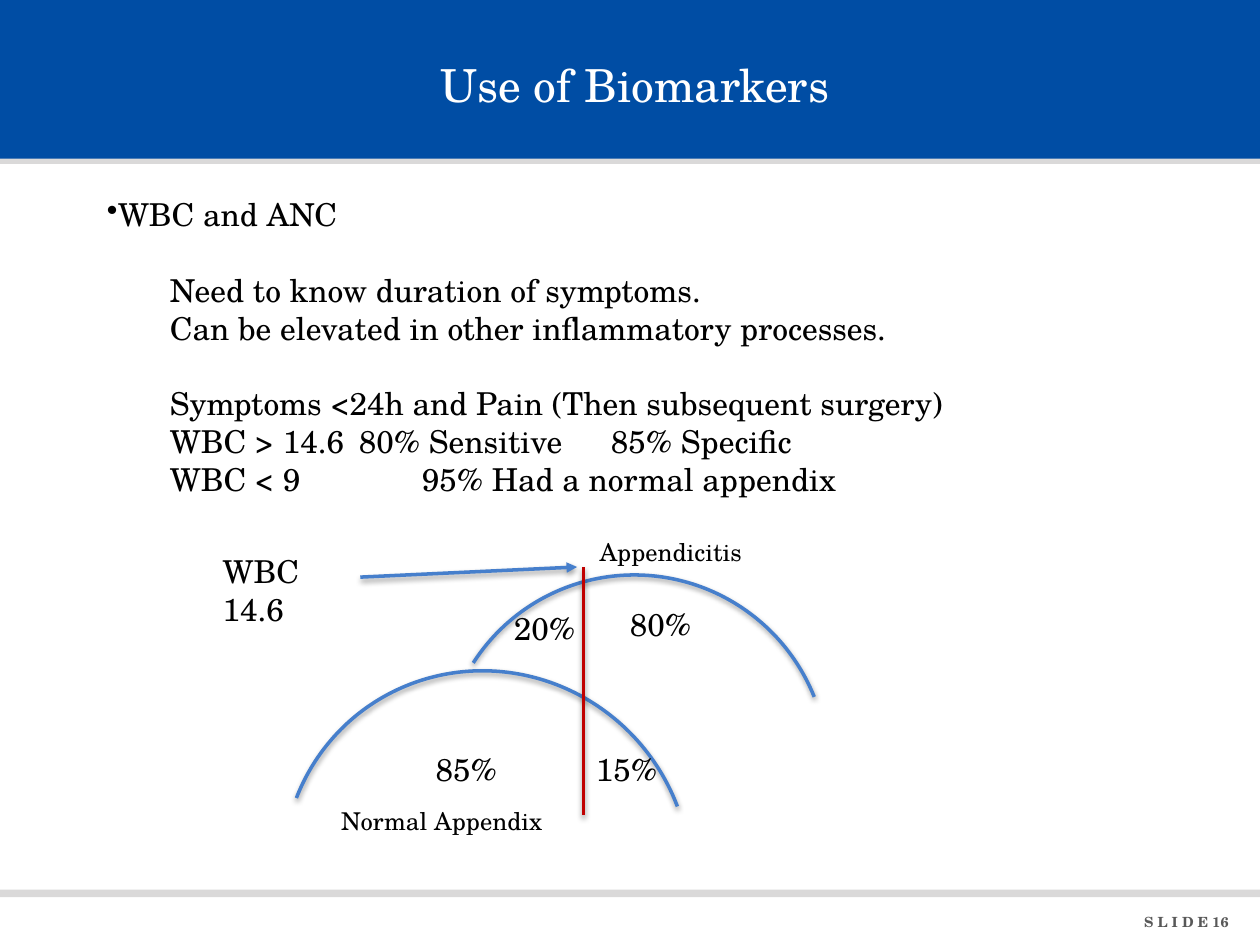
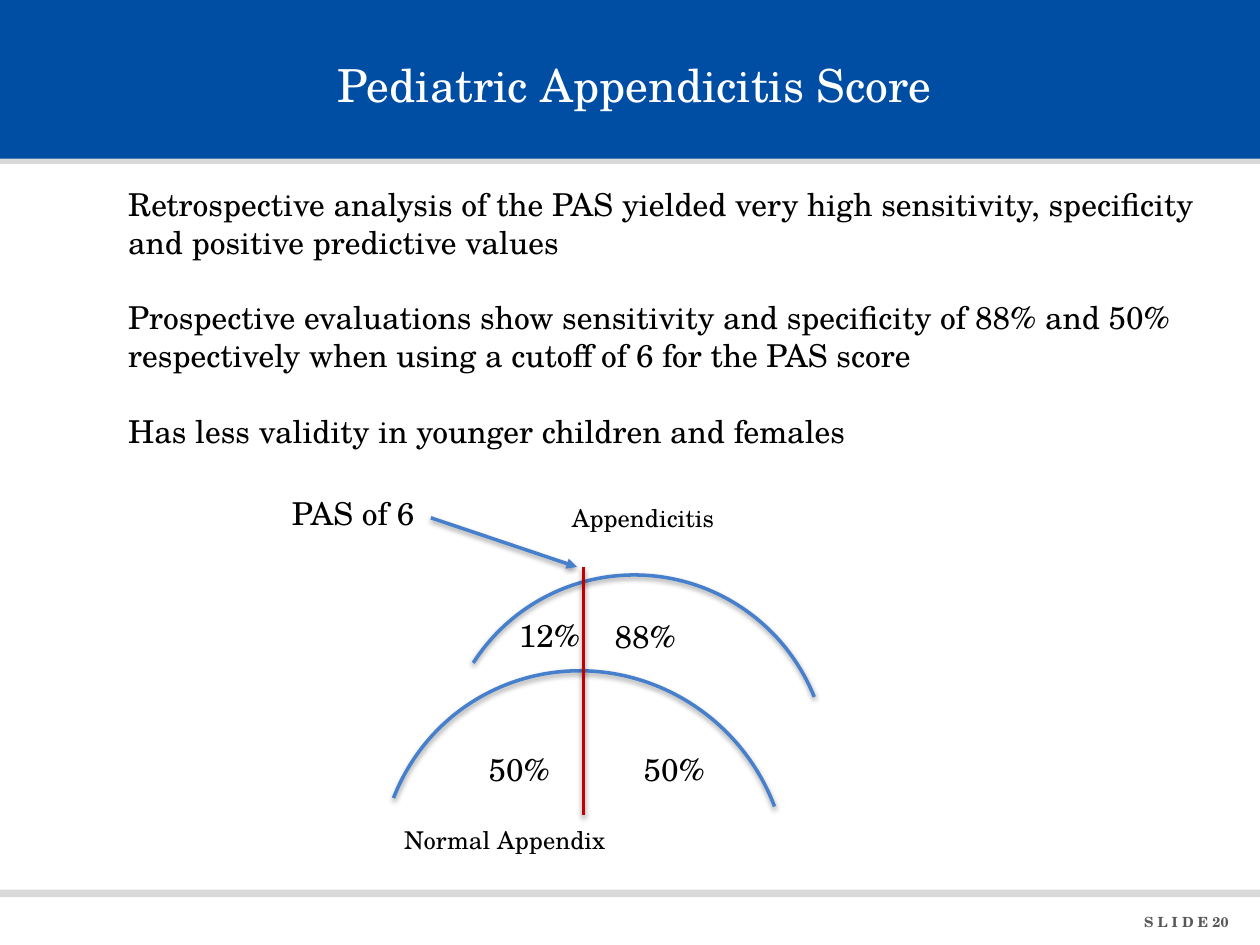
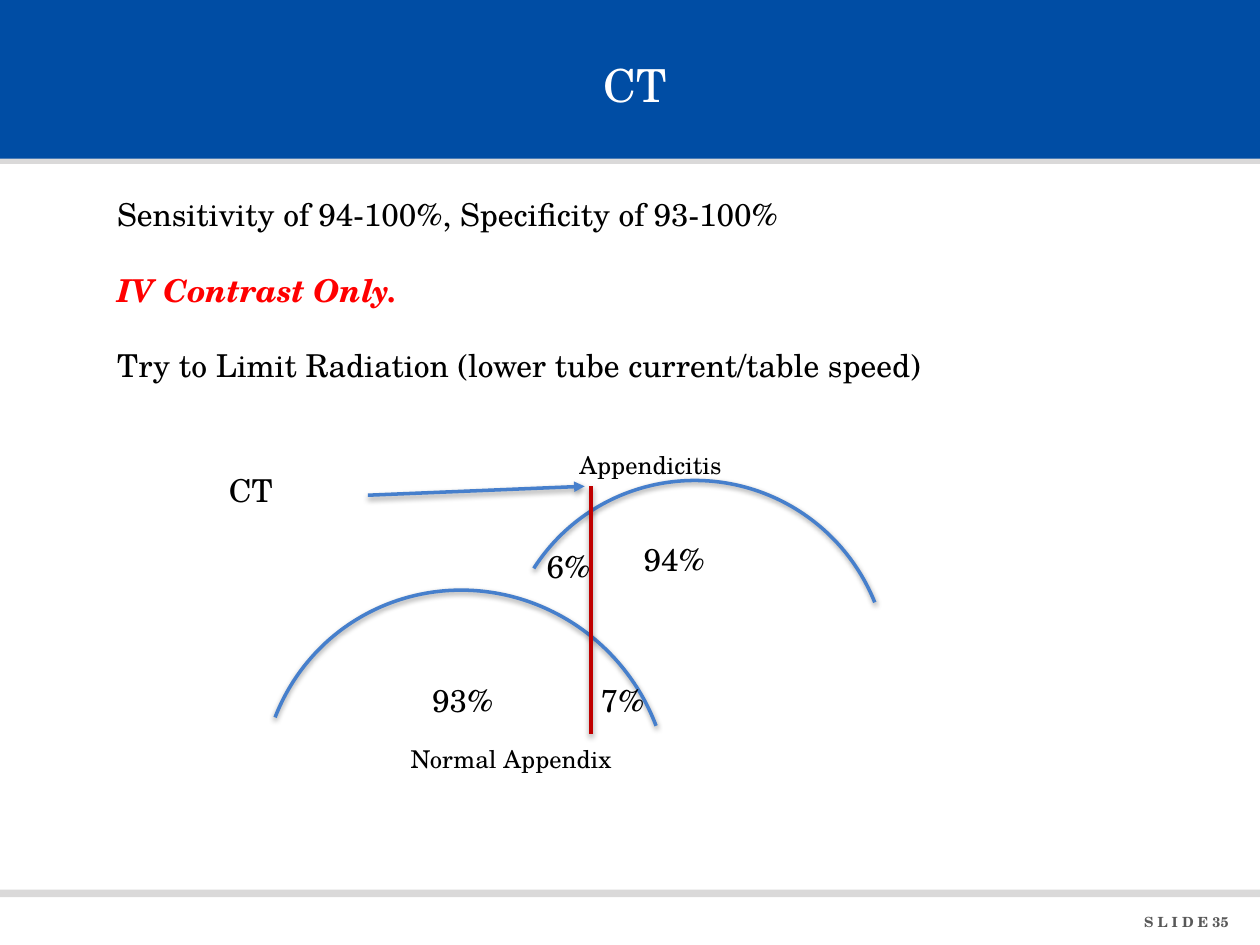
from lxml import etree
from pptx import Presentation
from pptx.dml.color import RGBColor
from pptx.enum.shapes import MSO_CONNECTOR, MSO_SHAPE
from pptx.enum.text import MSO_ANCHOR, PP_ALIGN
from pptx.oxml.ns import qn
from pptx.util import Pt

RECTANGLE, ARC = MSO_SHAPE.RECTANGLE, MSO_SHAPE.ARC
STRAIGHT = MSO_CONNECTOR.STRAIGHT
LEFT, CENTER, RIGHT = PP_ALIGN.LEFT, PP_ALIGN.CENTER, PP_ALIGN.RIGHT
TOP, MIDDLE = MSO_ANCHOR.TOP, MSO_ANCHOR.MIDDLE

FONT = "TeX Gyre Schola"
COLORS = {
    "band": "004DA4", "rule": "DAD9D9", "white": "FFFFFF", "text": "000000",
    "footer": "585858", "curve": "467FCC", "cutoff": "C00000", "alert": "FF0000",
}
LINE_GAP = 21.6  # one empty line at 18 points

# Bands behind every slide: left, top, width, height, colour
BANDS = [
    (0, 75.6, 720, 18, "rule"),
    (0, 0, 720, 90.7, "band"),
    (0, 508.3, 720, 4.4, "rule"),
]
FOOTER_BOX = (607, 518.4, 102.2, 16.6)

# Each curve: width, height, start and end adjustment
CURVES = {
    "normal": (231.1, 236.2, 145.18, 11.896),
    "appendicitis": (219.6, 221, 151.606, 10.883),
}
CURVE_ROTATION = 320.2
CUTOFF_HEIGHT = 141.8
ARROW_GAP = 3.6

INDENTED = {"level": 1, "margin": 36}
TABBED = {"level": 1, "tabs": (108, 252, 324, 402.8)}
NEW_BLOCK = {"before": LINE_GAP}

# Body paragraphs are (text, format); labels are (text, left, top, width)
SLIDES = [
    {
        "number": 16,
        "title": "Use of Biomarkers",
        "title_box": (42.5, 12.2, 640.8, 72),
        "body_box": (54, 108, 606.2, 203.8),
        "body": [
            ("WBC and ANC", {"bullet": "•"}),
            ("Need to know duration of symptoms.", INDENTED | NEW_BLOCK),
            ("Can be elevated in other inflammatory processes.", INDENTED),
            ("Symptoms <24h and Pain (Then subsequent surgery)", INDENTED | NEW_BLOCK),
            ("\tWBC > 14.6\t80% Sensitive\t85% Specific", TABBED),
            ("\tWBC < 9\t\t95% Had a normal appendix", TABBED),
        ],
        "curves": {"normal": (162.7, 382.3), "appendicitis": (253.4, 328.3)},
        "cutoff": (333.4, 324),
        "arrow_start": (205.9, 329.8),
        "captions": [
            ("Appendicitis", 335.5, 303.1, 104.4),
            ("Normal Appendix", 187.9, 457.2, 154.8),
        ],
        "values": [
            ("80%", 352.8, 342, 115.2),
            ("20%", 286.6, 344.2, 115.2),
            ("85%", 241.9, 424.8, 115.2),
            ("15%", 333.4, 424.8, 115.2),
            ("WBC 14.6", 120.2, 311.8, 95.8),
        ],
    },
    {
        "number": 20,
        "title": "Pediatric Appendicitis Score",
        "title_box": (18, 12.2, 689.8, 72),
        "body_box": (66.2, 102.2, 642.2, 159.8),
        "body": [
            ("Retrospective analysis of the PAS yielded very high sensitivity, "
             "specificity and positive predictive values", {}),
            ("Prospective evaluations show sensitivity and specificity of 88% and "
             "50% respectively when using a cutoff of 6 for the PAS score", NEW_BLOCK),
            ("Has less validity in younger children and females", NEW_BLOCK),
        ],
        "curves": {"normal": (218.2, 382.3), "appendicitis": (253.4, 328.3)},
        "cutoff": (333.4, 324),
        "arrow_start": (246.2, 295.9),
        "captions": [
            ("Appendicitis", 319.7, 283.7, 104.4),
            ("Normal Appendix", 223.9, 468, 154.8),
        ],
        "values": [
            ("88%", 344.2, 349.2, 115.2),
            ("12%", 289.4, 348.5, 115.2),
            ("50%", 272.2, 424.8, 115.2),
            ("50%", 360.7, 424.8, 115.2),
            ("PAS of 6", 159.8, 278.6, 95.8),
        ],
    },
    {
        "number": 35,
        "title": "CT",
        "title_box": (42.5, 12.2, 640.8, 72),
        "body_box": (59.8, 108, 606.2, 181.4),
        "body": [
            ("Sensitivity of 94-100%, Specificity of 93-100%", {}),
            ("IV Contrast Only.",
             NEW_BLOCK | {"color": "alert", "bold": True, "italic": True}),
            ("Try to Limit Radiation (lower tube current/table speed)", NEW_BLOCK),
        ],
        "curves": {"normal": (150.5, 336.2), "appendicitis": (288, 274.3)},
        "cutoff": (337.7, 277.9),
        "arrow_start": (210.2, 283),
        "captions": [
            ("Normal Appendix", 227.5, 421.9, 154.8),
            ("Appendicitis", 324, 253.4, 154.8),
        ],
        "values": [
            ("94%", 360.7, 305.3, 115.2),
            ("6%", 305.3, 308.9, 69.8),
            ("93%", 239.8, 385.9, 115.2),
            ("7%", 336.2, 385.9, 115.2),
            ("CT", 123.8, 265.7, 95.8),
        ],
    },
]


def points(values):
    return [Pt(value) for value in values]


def rgb(name):
    return RGBColor.from_string(COLORS[name])


def add_child(parent, tag, **attributes):
    child = etree.SubElement(parent, qn(tag))
    for name, value in attributes.items():
        child.set(name, str(value))
    return child


def write(paragraph, text, size=18, color="text", bold=False, italic=False,
          align=LEFT, before=0, level=0, margin=0, bullet=None, tabs=()):
    paragraph.alignment = align
    paragraph.level = level
    paragraph.space_before = Pt(before)
    properties = paragraph._p.get_or_add_pPr()
    properties.set("marL", str(Pt(margin)))
    properties.set("indent", "0")
    if bullet:
        add_child(properties, "a:buChar", char=bullet)
    else:
        add_child(properties, "a:buNone")
    if tabs:
        tab_list = add_child(properties, "a:tabLst")
        for position in tabs:
            add_child(tab_list, "a:tab", pos=Pt(position), algn="l")
    run = paragraph.add_run()
    run.text = text
    font = run.font
    font.name, font.size, font.bold, font.italic = FONT, Pt(size), bold, italic
    font.color.rgb = rgb(color)


def add_text(slide, box, paragraphs):
    frame = slide.shapes.add_textbox(*points(box)).text_frame
    frame.word_wrap = True
    frame.vertical_anchor = TOP
    for index, (text, text_format) in enumerate(paragraphs):
        paragraph = frame.add_paragraph() if index else frame.paragraphs[0]
        write(paragraph, text, **text_format)


def style_line(shape, color):
    """Two-point line with a soft shadow below it."""
    shape.line.color.rgb = rgb(color)
    shape.line.width = Pt(2)
    effects = add_child(shape._element.spPr, "a:effectLst")
    shadow = add_child(effects, "a:outerShdw", blurRad=Pt(3.15), dist=Pt(1.57),
                       dir=90 * 60000, rotWithShape=0)
    black = add_child(shadow, "a:srgbClr", val=COLORS["text"])
    add_child(black, "a:alpha", val=38000)


def add_line(slide, start, end, color):
    line = slide.shapes.add_connector(STRAIGHT, *points(start + end))
    style_line(line, color)
    return line


def add_curve(slide, kind, position):
    width, height, start, end = CURVES[kind]
    curve = slide.shapes.add_shape(ARC, *points((*position, width, height)))
    curve.adjustments[0], curve.adjustments[1] = start, end
    curve.rotation = CURVE_ROTATION
    curve.fill.background()
    style_line(curve, "curve")


def add_bands(slide, layout):
    """Draw the bands and move them to the layout that all slides share."""
    for *box, color in BANDS:
        band = slide.shapes.add_shape(RECTANGLE, *points(box))
        band.shadow.inherit = False
        band.fill.solid()
        band.fill.fore_color.rgb = rgb(color)
        band.line.fill.background()
        layout.shapes._spTree.append(band._element)


def add_title(slide, text, box):
    title = slide.shapes.title
    title.left, title.top, title.width, title.height = points(box)
    title.text_frame.vertical_anchor = MIDDLE
    write(title.text_frame.paragraphs[0], text, size=26, color="white", align=CENTER)


def add_diagram(slide, content):
    for kind, position in content["curves"].items():
        add_curve(slide, kind, position)
    for text, left, top, width in content["captions"]:
        add_text(slide, (left, top, width, 24.5), [(text, {"size": 14})])
    left, top = content["cutoff"]
    add_line(slide, (left, top), (left, top + CUTOFF_HEIGHT), "cutoff")
    for text, *box in content["values"]:
        add_text(slide, (*box, 28.8), [(text, {})])
    arrow = add_line(slide, content["arrow_start"], (left - ARROW_GAP, top), "curve")
    add_child(arrow.line._get_or_add_ln(), "a:tailEnd", type="triangle")


def main():
    presentation = Presentation()
    presentation.slide_width, presentation.slide_height = Pt(720), Pt(540)
    layout = presentation.slide_layouts[5]
    for index, content in enumerate(SLIDES):
        slide = presentation.slides.add_slide(layout)
        if index == 0:
            add_bands(slide, layout)
        add_title(slide, content["title"], content["title_box"])
        add_text(slide, content["body_box"], content["body"])
        add_diagram(slide, content)
        footer = {"size": 8, "color": "footer", "bold": True, "align": RIGHT}
        add_text(slide, FOOTER_BOX, [(f"S L I D E {content['number']}", footer)])
    presentation.save("out.pptx")


if __name__ == "__main__":
    main()
